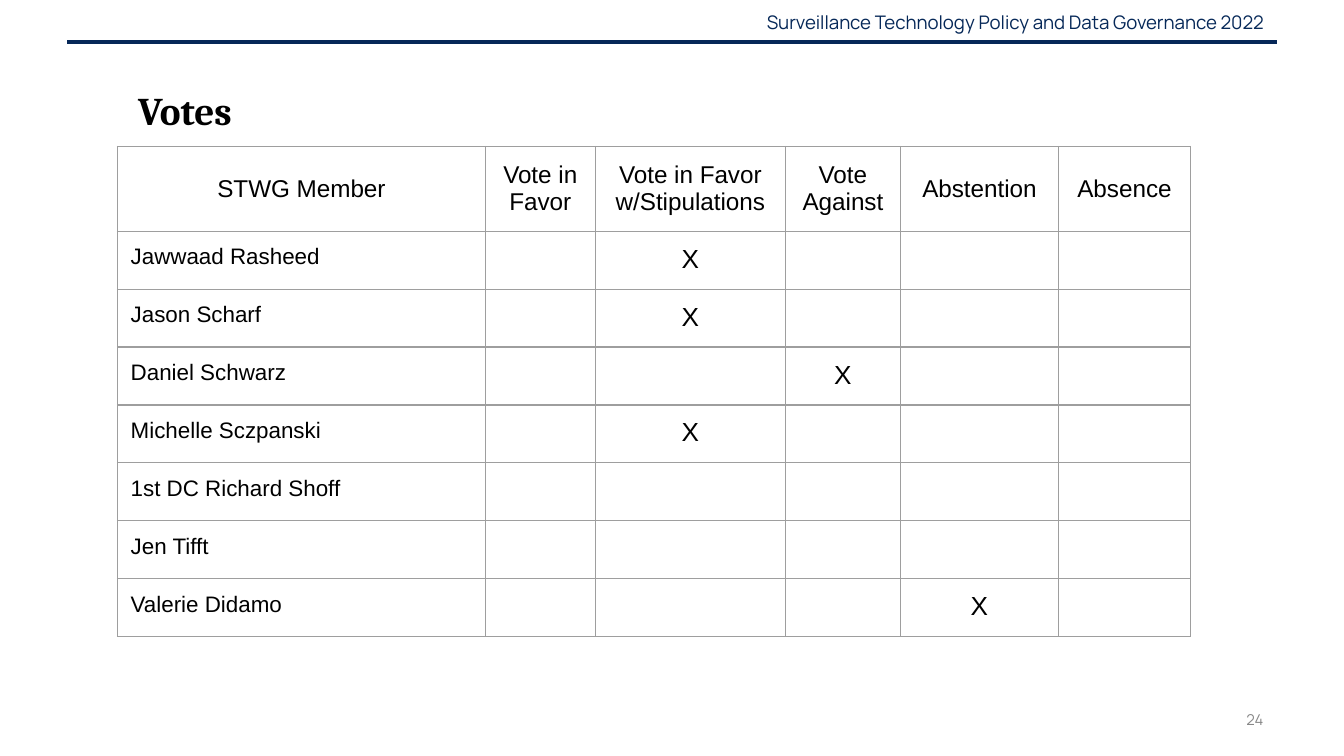
"""Build the slide that shows how each member voted."""
from lxml.etree import SubElement
from pptx import Presentation
from pptx.dml.color import RGBColor
from pptx.enum.shapes import MSO_CONNECTOR
from pptx.enum.text import MSO_ANCHOR, PP_ALIGN
from pptx.oxml.ns import qn
from pptx.util import Cm, Pt

HEADS = ["STWG Member", "Vote in Favor", "Vote in Favor w/Stipulations",
         "Vote Against", "Abstention", "Absence"]
VOTES = [("Jawwaad Rasheed\u00a0", 2), ("Jason Scharf\u00a0", 2),
         ("Daniel Schwarz\u00a0", 3), ("Michelle Sczpanski", 2),
         ("1st DC Richard Shoff\u00a0", None), ("Jen Tifft\u00a0", None),
         ("Valerie Didamo", 4)]
WIDTHS = [6.95, 2.08, 3.59, 2.18, 2.98, 2.5]
HEAD_H, ROW_H = 1.52, 1.06

THEME = {
    "navy": "062858", "gray": "888888", "black": "000000", "grid": "9E9E9E",
    "brand": "Manrope", "serif": "Cambria", "sans": "Arial",
    "top": 10, "page": 8, "title": 21, "head": 13, "name": 12, "mark": 14,
}
RIGHT = {"alignment": PP_ALIGN.RIGHT}
MID = {"alignment": PP_ALIGN.CENTER}
LEFT = {"alignment": PP_ALIGN.LEFT}
LOOSE = {"line_spacing": 1.15, "space_before": Pt(12)}
TEXTS = [
    ("Surveillance Technology Policy and Data Governance 2022",
     (13.23, 0.03, 10.9, 0.76), ("top", "brand", "navy", False),
     MSO_ANCHOR.MIDDLE, RIGHT),
    ("24", (18.21, 13.23, 5.92, 0.76), ("page", "brand", "gray", False),
     MSO_ANCHOR.MIDDLE, RIGHT),
    ("Votes", (2.36, 1.37, 3, 2.24), ("title", "serif", "black", True),
     MSO_ANCHOR.TOP, LOOSE),
]


def put(item, form):
    for key, val in form.items():
        setattr(item, key, val)


def write(para, text, style, form):
    size, face, tint, bold = style
    put(para, form)
    run = para.add_run()
    run.text = text
    put(run.font, {"size": Pt(THEME[size]), "name": THEME[face], "bold": bold})
    run.font.color.rgb = RGBColor.from_string(THEME[tint])


def label(slide, text, area, style, anchor, form):
    frame = slide.shapes.add_textbox(*map(Cm, area)).text_frame
    put(frame, {"word_wrap": True, "vertical_anchor": anchor})
    write(frame.paragraphs[0], text, style, form)


def rule(slide):
    line = slide.shapes.add_connector(
        MSO_CONNECTOR.STRAIGHT, Cm(1.27), Cm(0.79), Cm(24.13), Cm(0.79))
    line.line.color.rgb = RGBColor.from_string(THEME["navy"])
    line.line.width = Pt(2.25)
    SubElement(line._element.spPr, qn("a:effectLst"))


def frame_cell(cell):
    props = cell._tc.get_or_add_tcPr()
    for side in ("lnL", "lnR", "lnT", "lnB"):
        edge = SubElement(props, qn(f"a:{side}"), w=str(Pt(0.75)))
        fill = SubElement(edge, qn("a:solidFill"))
        SubElement(fill, qn("a:srgbClr"), val=THEME["grid"])
    cell.fill.background()
    put(cell, dict.fromkeys(
        ("margin_left", "margin_right", "margin_top", "margin_bottom"),
        Cm(0.25)))


def fill_cell(cell, text, size, form):
    para = cell.text_frame.paragraphs[0]
    if text:
        write(para, text, (size, "sans", "black", False), form)
    else:
        SubElement(para._p, qn("a:endParaRPr"), sz=str(THEME["mark"] * 100))


def ballot(slide):
    high = HEAD_H + ROW_H * len(VOTES)
    grid = slide.shapes.add_table(
        len(VOTES) + 1, len(HEADS), Cm(2.22), Cm(2.77),
        Cm(sum(WIDTHS)), Cm(high)).table
    put(grid, {"first_row": False, "horz_banding": False})
    for col, wide in zip(grid.columns, WIDTHS):
        col.width = Cm(wide)
    for num, row in enumerate(grid.rows):
        row.height = Cm(ROW_H if num else HEAD_H)
        for cell in row.cells:
            frame_cell(cell)
    for col, text in enumerate(HEADS):
        cell = grid.cell(0, col)
        cell.vertical_anchor = MSO_ANCHOR.MIDDLE
        fill_cell(cell, text, "head", MID)
    for num, (name, vote) in enumerate(VOTES, 1):
        fill_cell(grid.cell(num, 0), name, "name", LEFT)
        for col in range(1, len(HEADS)):
            mark = "X" if col == vote else ""
            fill_cell(grid.cell(num, col), mark, "mark", MID)


def main():
    deck = Presentation()
    put(deck, {"slide_width": Cm(25.4), "slide_height": Cm(14.29)})
    slide = deck.slides.add_slide(deck.slide_layouts[6])
    rule(slide)
    for item in TEXTS:
        label(slide, *item)
    ballot(slide)
    deck.save("out.pptx")


if __name__ == "__main__":
    main()
